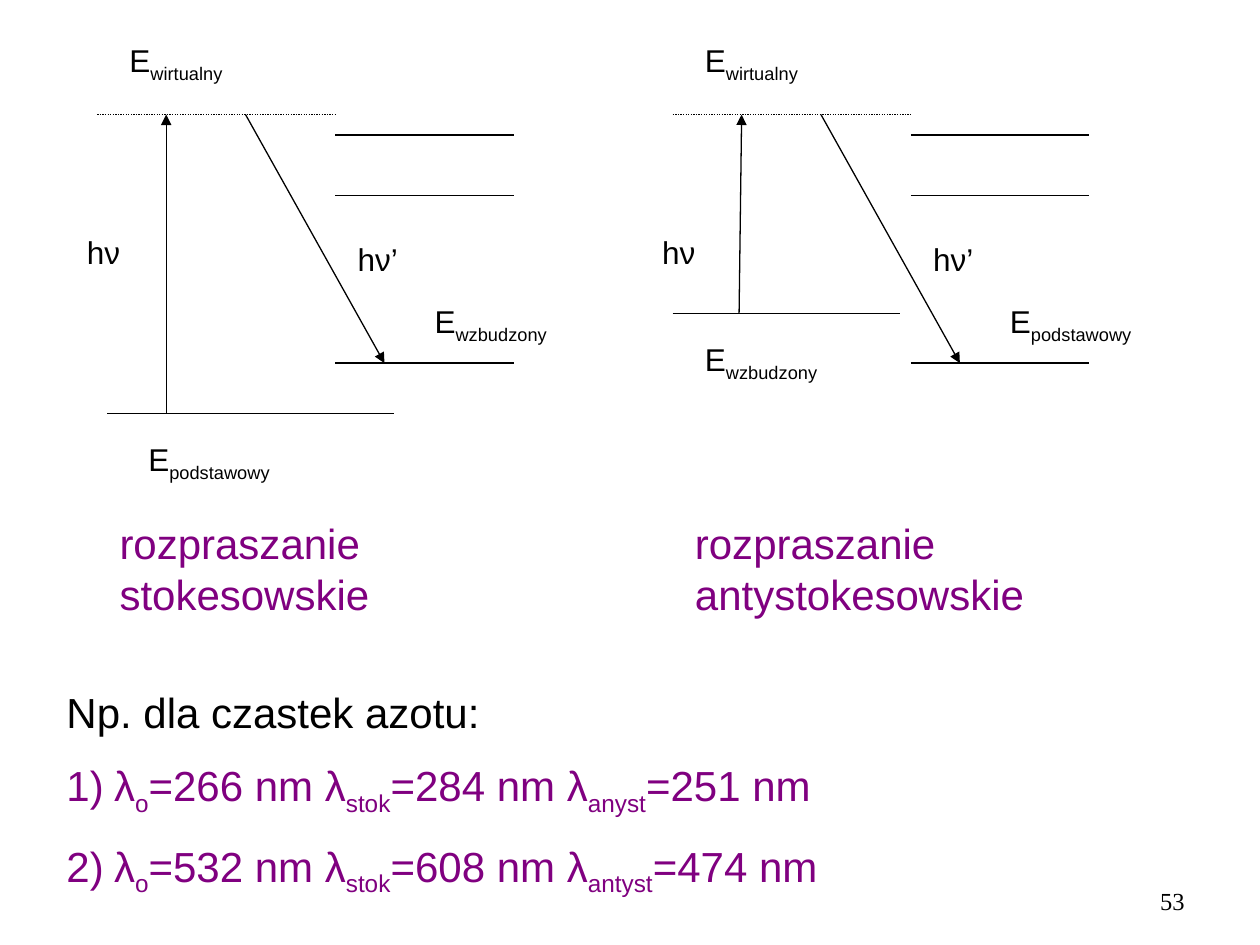
"""Build a slide comparing Stokes and anti-Stokes scattering energy diagrams."""
import pptx
import pptx.dml.color
import pptx.enum.dml
import pptx.enum.shapes
import pptx.enum.text
import pptx.oxml.ns
import pptx.util
from lxml import etree

Cm, Pt = pptx.util.Cm, pptx.util.Pt
COLORS = {"ink": "000000", "accent": "800080"}
LEFT, TOP, RIGHT = 1.96, 2.31, 6.76
LEVEL_END = 10.36
LEVELS = [7.32, 3.94, 2.72]
DIAGRAMS = [
    {
        "dx": 0,
        "start": (2.16, 7.95, 8.33),
        "pump": (3.35, 3.35),
        "labels": [
            (["E", "wzbudzony"], 8.51, 5.97, 3.05),
            (["E", "podstawowy"], 2.74, 8.74, 3.25),
        ],
        "caption": "rozpraszanie stokesowskie",
    },
    {
        "dx": 11.6,
        "start": (1.96, 6.55, 6.32),
        "pump": (3.3, 3.35),
        "labels": [
            (["E", "podstawowy"], 8.51, 5.97, 3.25),
            (["E", "wzbudzony"], 2.36, 6.73, 3.05),
        ],
        "caption": "rozpraszanie antystokesowskie",
    },
]
COMMON_LABELS = [
    (["hν"], 1.5, 4.57, 1.19),
    (["hν’"], 6.96, 4.72, 1.35),
    (["E", "wirtualny"], 2.36, 0.71, 2.62),
]
EXAMPLE_TITLE = "Np. dla czastek azotu:"
EXAMPLES = [
    ["λ", "o", "=266 nm λ", "stok", "=284 nm λ", "anyst", "=251 nm"],
    ["λ", "o", "=532 nm λ", "stok", "=608 nm λ", "antyst", "=474 nm"],
]


def rgb(name):
    return pptx.dml.color.RGBColor.from_string(COLORS[name])


def add_line(shapes, x1, y1, x2, y2, dotted=False, arrow=False):
    c = shapes.add_connector(pptx.enum.shapes.MSO_CONNECTOR.STRAIGHT,
                             Cm(x1), Cm(y1), Cm(x2), Cm(y2))
    c.line.color.rgb = rgb("ink")
    c.line.width = Pt(0.75)
    if dotted:
        c.line.dash_style = pptx.enum.dml.MSO_LINE.ROUND_DOT
    if arrow:
        ln = c.line._get_or_add_ln()
        etree.SubElement(ln, pptx.oxml.ns.qn("a:tailEnd"), type="triangle")
    etree.SubElement(c._element.spPr, pptx.oxml.ns.qn("a:effectLst"))


def write(p, parts, size, color="ink", font="Arial"):
    """Add runs to a paragraph; every second part is a subscript."""
    for i, part in enumerate(parts):
        r = p.add_run()
        r.text = part
        r.font.size = Pt(size)
        r.font.name = font
        r.font.color.rgb = rgb(color)
        if i % 2:
            r.font._element.set("baseline", "-25000")


def add_box(shapes, x, y, w, h, wrap=True):
    tf = shapes.add_textbox(Cm(x), Cm(y), Cm(w), Cm(h)).text_frame
    tf.word_wrap = wrap
    return tf


def add_diagram(slide, diagram):
    shapes = slide.shapes.add_group_shape().shapes
    dx = diagram["dx"]
    x1, x2, base = diagram["start"]
    foot, head = diagram["pump"]
    add_line(shapes, dx + x1, base, dx + x2, base)
    add_line(shapes, dx + LEFT, TOP, dx + RIGHT, TOP, dotted=True)
    add_line(shapes, dx + foot, base, dx + head, TOP, arrow=True)
    for y in LEVELS:
        add_line(shapes, dx + RIGHT, y, dx + LEVEL_END, y)
    add_line(shapes, dx + 4.95, TOP, dx + 7.75, LEVELS[0], arrow=True)
    for parts, x, y, w in COMMON_LABELS + diagram["labels"]:
        tf = add_box(shapes, dx + x, y, w, 1.02, wrap=False)
        write(tf.paragraphs[0], parts, 18)
    tf = add_box(shapes, dx + 2.16, 10.31, 9.8, 2.29)
    write(tf.paragraphs[0], [diagram["caption"]], 24, "accent")


def add_examples(slide):
    tf = add_box(slide.shapes, 1.09, 13.72, 22.81, 4.32)
    write(tf.paragraphs[0], [EXAMPLE_TITLE], 24)
    for parts in EXAMPLES:
        p = tf.add_paragraph()
        p.space_before = Pt(13)
        write(p, parts, 24, "accent")
        pPr = p._p.get_or_add_pPr()
        etree.SubElement(pPr, pptx.oxml.ns.qn("a:buAutoNum"), type="arabicParenR")
    for p in tf.paragraphs:
        pPr = p._p.get_or_add_pPr()
        pPr.set("marL", str(Cm(0.96)))
        pPr.set("indent", str(-Cm(0.96)))


def main():
    prs = pptx.Presentation()
    prs.slide_width, prs.slide_height = Cm(25.4), Cm(19.05)
    s = prs.slides.add_slide(prs.slide_layouts[6])
    for diagram in DIAGRAMS:
        add_diagram(s, diagram)
    add_examples(s)
    tf = add_box(s.shapes, 18.21, 17.65, 5.92, 1.02)
    tf.vertical_anchor = pptx.enum.text.MSO_ANCHOR.MIDDLE
    p = tf.paragraphs[0]
    p.alignment = pptx.enum.text.PP_ALIGN.RIGHT
    write(p, ["53"], 14, font="Times New Roman")
    prs.save("out.pptx")


if __name__ == "__main__":
    main()
